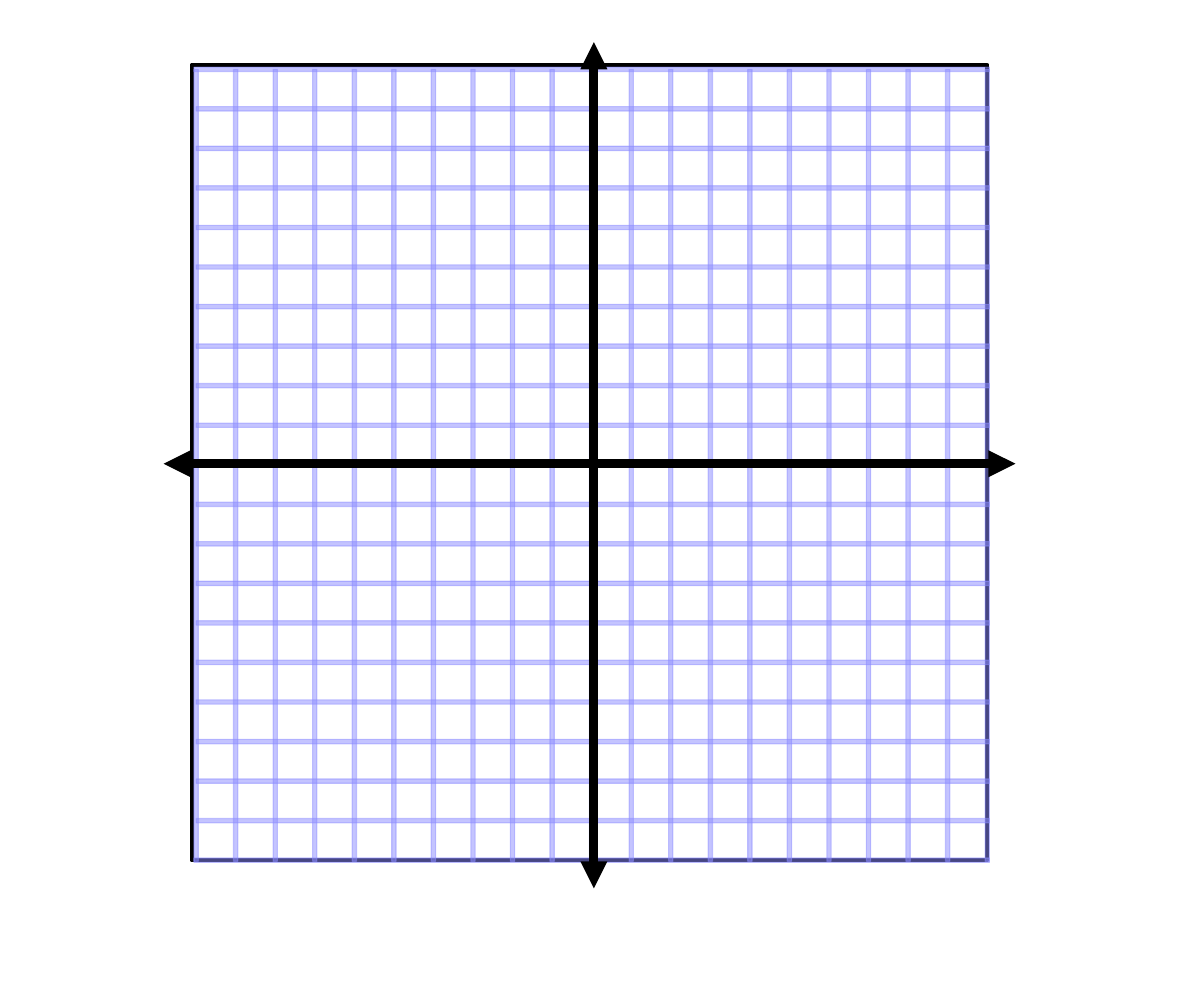
from lxml.etree import SubElement
from pptx import Presentation
from pptx.dml.color import RGBColor as Rgb
from pptx.enum.shapes import MSO_CONNECTOR as Connector, MSO_SHAPE as Shape
from pptx.oxml.ns import qn
from pptx.util import Inches, Pt

COLORS = {"paper": "FFFFFF", "ink": "000000", "grid": "8C8CFF"}
OPACITY = 51
CELLS = 20
CELL = 0.365
BAR = 0.04
GRID_BOX = (1.79, 0.62, CELLS * CELL, CELLS * CELL)
FRAME_OFFSET = 0.02
FRAME_SIDE = 7.34


def add_box(group, box, fill, line, weight):
    """Add a filled and outlined rectangle without a shadow."""
    shape = group.shapes.add_shape(Shape.RECTANGLE, *map(Inches, box))
    shape.shadow.inherit = False
    shape.fill.solid()
    shape.fill.fore_color.rgb = Rgb.from_string(COLORS[fill])
    shape.line.color.rgb = Rgb.from_string(COLORS[line])
    shape.line.width = Pt(weight)
    return shape


def add_frame(group, box):
    """Draw the white sheet with its black border behind the grid."""
    left, top = box[0] - FRAME_OFFSET, box[1] - FRAME_OFFSET
    frame = add_box(group, (left, top, FRAME_SIDE, FRAME_SIDE), "paper", "ink", 3)
    SubElement(frame.line._get_or_add_ln(), qn("a:round"))


def add_bar(group, box):
    """Draw one translucent grid bar."""
    bar = add_box(group, box, "grid", "grid", 0)
    for color in bar._element.spPr.iter(qn("a:srgbClr")):
        SubElement(color, qn("a:alpha")).set("val", str(OPACITY * 1000))


def add_grid(group, box):
    """Draw the evenly spaced vertical and horizontal bars of the box."""
    left, top, width, height = box
    for index in range(CELLS + 1):
        inset = 0 if index in (0, CELLS) else 0.02
        step = index * CELL
        add_bar(group, (left + step, top + 0.02, BAR, height + 0.01))
        add_bar(group, (left + inset, top + step, width + BAR - inset, BAR))


def add_axis(group, start, end):
    """Draw one thick axis with an arrowhead at each end."""
    ends = map(Inches, (*start, *end))
    axis = group.shapes.add_connector(Connector.STRAIGHT, *ends)
    axis.line.color.rgb = Rgb.from_string(COLORS["ink"])
    axis.line.width = Pt(6)
    for tag in ("a:headEnd", "a:tailEnd"):
        SubElement(axis.line._get_or_add_ln(), qn(tag)).set("type", "triangle")
    SubElement(axis._element.spPr, qn("a:effectLst"))


def add_axes(group, box):
    """Draw the two axes crossing in the middle of the box."""
    left, top, width, height = box
    middle_x = left + width / 2 + BAR
    middle_y = top + height / 2 + 0.01
    add_axis(group, (middle_x, top + height + 0.28), (middle_x, top - 0.23))
    add_axis(group, (left - 0.28, middle_y), (left + width + 0.28, middle_y))


def add_plane(page, box):
    """Group the frame, grid and axes of the coordinate plane."""
    plane = page.shapes.add_group_shape()
    for add_part in (add_frame, add_grid, add_axes):
        add_part(plane, box)


def main():
    """Build and save the one-page deck."""
    deck = Presentation()
    deck.slide_width, deck.slide_height = Inches(11.11), Inches(9.11)
    page = deck.slides.add_slide(deck.slide_layouts[6])
    page.background.fill.solid()
    page.background.fill.fore_color.rgb = Rgb.from_string(COLORS["paper"])
    add_plane(page, GRID_BOX)
    deck.save("out.pptx")


if __name__ == "__main__":
    main()
